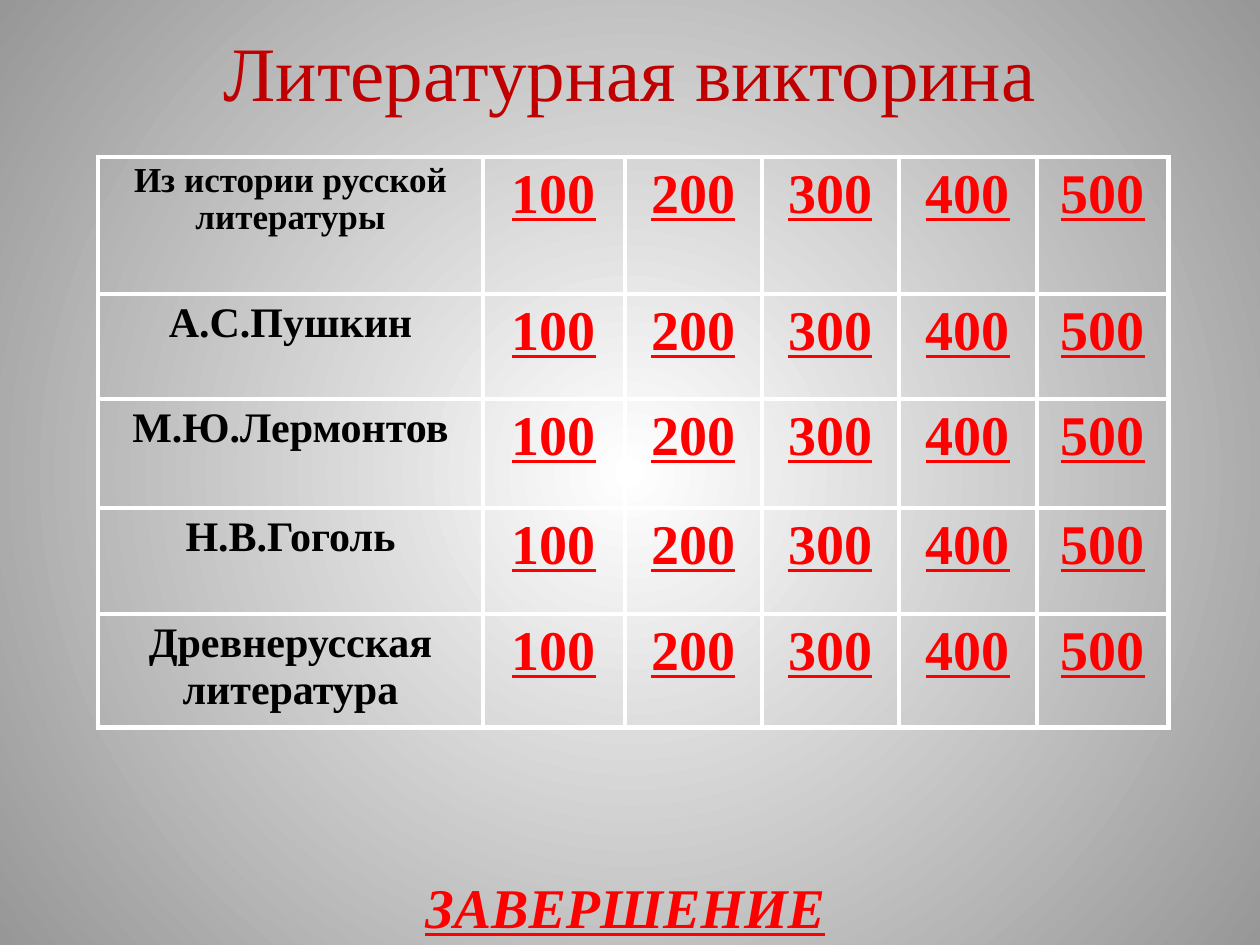
from lxml import etree
from pptx import Presentation
from pptx.dml.color import RGBColor
from pptx.enum.text import MSO_ANCHOR, PP_ALIGN
from pptx.oxml import parse_xml
from pptx.oxml.ns import nsdecls, qn
from pptx.util import Emu, Pt

CENTER = PP_ALIGN.CENTER
MIDDLE = MSO_ANCHOR.MIDDLE
TOP = MSO_ANCHOR.TOP
SCALE = 914400 // 126
FONT = "Times New Roman"
COLORS = {
    "title": "C00000",
    "link": "FF0000",
    "topic": "000000",
    "border": "FFFFFF",
    "center": "FFFFFF",
    "edge": "979797",
}
TOPICS = [
    ("Из истории русской литературы", 20, 0.95),
    ("А.С.Пушкин", 24, None),
    ("М.Ю.Лермонтов", 24, None),
    ("Н.В.Гоголь", 24, None),
    ("Древнерусская литература", 24, None),
]
SCORES = range(100, 600, 100)
COL_WIDTHS = [385, 142, 137, 137, 138, 132]
ROW_HEIGHTS = [137, 105, 109, 106, 107]


def px(n):
    return Emu(n * SCALE)


def write(tf, text, size, color, bold=False, italic=False, underline=False,
          spacing=None, before=None):
    p = tf.paragraphs[0]
    p.alignment = CENTER
    if spacing:
        p.line_spacing = spacing
    if before:
        spc = etree.SubElement(p._p.get_or_add_pPr(), qn("a:spcBef"))
        etree.SubElement(spc, qn("a:spcPct")).set("val", str(before * 1000))
    r = p.add_run()
    r.text = text
    f = r.font
    f.name, f.size = FONT, Pt(size)
    f.bold, f.italic, f.underline = bold, italic, underline
    f.color.rgb = RGBColor.from_string(COLORS[color])


def add_text(slide, box, text, size, color, anchor=TOP, wrap=True, **fmt):
    tf = slide.shapes.add_textbox(*map(px, box)).text_frame
    tf.word_wrap = wrap
    tf.vertical_anchor = anchor
    write(tf, text, size, color, **fmt)


def set_background(slide):
    slide.background.fill.solid()
    bg = slide.background._cSld.bg.bgPr
    stops = "".join(
        f'<a:gs pos="{pos}"><a:srgbClr val="{COLORS[name]}"/></a:gs>'
        for pos, name in ((0, "center"), (100000, "edge")))
    bg.replace(bg[0], parse_xml(
        f'<a:gradFill {nsdecls("a")} rotWithShape="1"><a:gsLst>{stops}</a:gsLst>'
        '<a:path path="circle"><a:fillToRect l="50000" t="50000" r="50000" b="50000"/>'
        '</a:path></a:gradFill>'))


def style_cell(cell):
    cell.fill.background()
    tc_pr = cell._tc.get_or_add_tcPr()
    for i, side in enumerate(("lnL", "lnR", "lnT", "lnB")):
        tc_pr.insert(i, parse_xml(
            f'<a:{side} {nsdecls("a")} w="{Pt(3)}"><a:solidFill>'
            f'<a:srgbClr val="{COLORS["border"]}"/></a:solidFill></a:{side}>'))


def add_board(slide, x, y):
    table = slide.shapes.add_table(
        len(ROW_HEIGHTS), len(COL_WIDTHS), px(x), px(y),
        px(sum(COL_WIDTHS)), px(sum(ROW_HEIGHTS))).table
    table.first_row = table.horz_banding = False
    for col, w in zip(table.columns, COL_WIDTHS):
        col.width = px(w)
    for row, h, (topic, size, spacing) in zip(table.rows, ROW_HEIGHTS, TOPICS):
        row.height = px(h)
        for cell in row.cells:
            style_cell(cell)
        head, *rest = row.cells
        write(head.text_frame, topic, size, "topic", bold=True,
              spacing=spacing, before=20)
        for cell, score in zip(rest, SCORES):
            write(cell.text_frame, str(score), 32, "link", bold=True,
                  underline=True, before=20)


def main():
    prs = Presentation()
    prs.slide_width, prs.slide_height = px(1260), px(945)
    slide = prs.slides.add_slide(prs.slide_layouts[6])
    set_background(slide)
    add_text(slide, (0, 0, 1260, 141), "Литературная викторина", 44, "title",
             anchor=MIDDLE)
    add_board(slide, 98, 157)
    add_text(slide, (413, 866, 425, 79), "ЗАВЕРШЕНИЕ", 32, "link", wrap=False,
             bold=True, italic=True, underline=True)
    prs.save("out.pptx")


if __name__ == "__main__":
    main()
